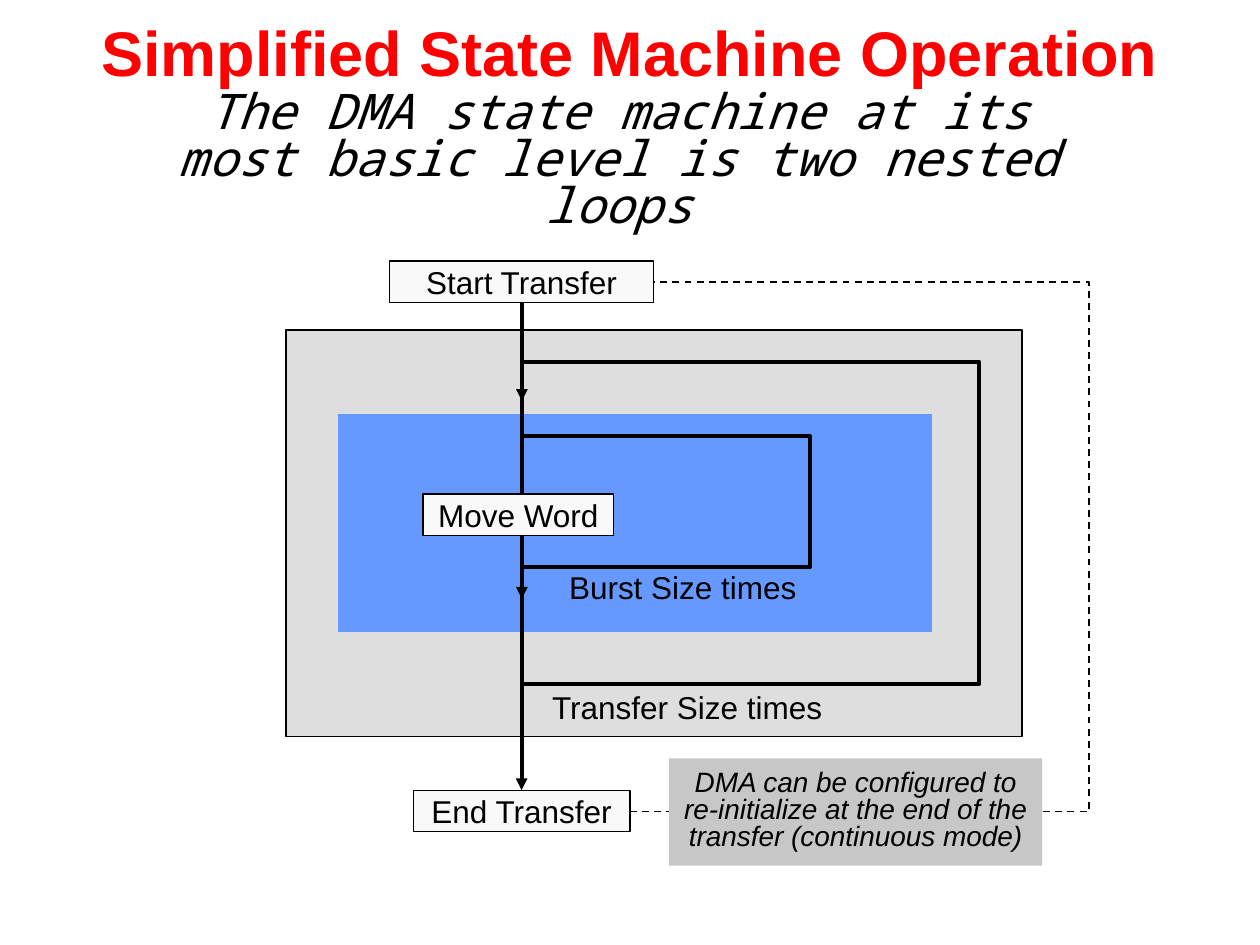
from lxml.etree import SubElement
from pptx import Presentation
from pptx.dml.color import RGBColor
from pptx.enum.dml import MSO_LINE
from pptx.enum.shapes import MSO_CONNECTOR, MSO_SHAPE
from pptx.enum.text import MSO_ANCHOR, PP_ALIGN
from pptx.oxml.ns import qn
from pptx.util import Cm, Pt

COLORS = {
    "title": "FF0000",
    "ink": "000000",
    "outer": "DEDEDE",
    "inner": "6699FF",
    "step": "F9F9F9",
    "note": "C7C7C7",
}
AXIS = 10.52


class Diagram:
    def __init__(self, page, font="Arial"):
        self.page = page
        self.font = font

    def color(self, name):
        return RGBColor.from_string(COLORS[name])

    def stroke(self, line, width, color="ink"):
        line.width = Pt(width)
        line.color.rgb = self.color(color)

    def add_text(self, box, text, size, color="ink", font=None, bold=False,
                 italic=False, spacing=None, anchor=MSO_ANCHOR.TOP, wrap=True):
        frame = box.text_frame
        frame.word_wrap = wrap
        frame.vertical_anchor = anchor
        para = frame.paragraphs[0]
        para.alignment = PP_ALIGN.CENTER
        if spacing:
            para.line_spacing = spacing
        span = para.add_run()
        span.text = text
        span.font.name = font or self.font
        span.font.size = Pt(size)
        span.font.bold = bold
        span.font.italic = italic
        span.font.color.rgb = self.color(color)

    def label(self, place, text, size=18, **style):
        box = self.page.shapes.add_textbox(*map(Cm, place))
        self.add_text(box, text, size, **style)

    def panel(self, place, fill, line=None, width=0.75):
        box = self.page.shapes.add_shape(MSO_SHAPE.RECTANGLE, *map(Cm, place))
        box.shadow.inherit = False
        box.fill.solid()
        box.fill.fore_color.rgb = self.color(fill)
        if line:
            self.stroke(box.line, width, line)
        else:
            box.line.fill.background()
        return box

    def step(self, left, top, width, text):
        box = self.panel((left, top, width, 0.84), "step", "ink")
        self.add_text(box, text, 18, anchor=MSO_ANCHOR.MIDDLE, wrap=False)
        return box

    def note(self, place, text):
        box = self.panel(place, "note")
        frame = box.text_frame
        frame.margin_left = frame.margin_right = Cm(0.25)
        frame.margin_top = frame.margin_bottom = Cm(0.25)
        self.add_text(box, text, 16, italic=True, spacing=0.8)

    def loop(self, left, right, top, bottom, width=2.25, dash=None):
        builder = self.page.shapes.build_freeform(Cm(left), Cm(bottom))
        corners = [(right, bottom), (right, top), (left, top)]
        builder.add_line_segments([(Cm(x), Cm(y)) for x, y in corners], close=False)
        shape = builder.convert_to_shape()
        shape.shadow.inherit = False
        shape.fill.background()
        self.stroke(shape.line, width)
        if dash:
            shape.line.dash_style = dash

    def arrow(self, top, bottom, start=None, end=None):
        arrow = self.page.shapes.add_connector(
            MSO_CONNECTOR.STRAIGHT, Cm(AXIS), Cm(top), Cm(AXIS), Cm(bottom))
        if start:
            arrow.begin_connect(start, 2)
        if end:
            arrow.end_connect(end, 0)
        self.stroke(arrow.line, 2.25)
        properties = arrow.element.spPr
        SubElement(properties.find(qn("a:ln")), qn("a:tailEnd"), type="triangle")
        SubElement(properties, qn("a:effectLst"))


def main():
    deck = Presentation()
    deck.slide_width, deck.slide_height = Cm(25.4), Cm(19.05)
    diagram = Diagram(deck.slides.add_slide(deck.slide_layouts[6]))

    diagram.loop(12.7, 21.95, 5.69, 16.36, width=1, dash=MSO_LINE.DASH)
    diagram.panel((5.77, 6.65, 14.83, 8.2), "outer", "ink", 1)
    diagram.label((0, 0, 25.4, 2.06), "Simplified State Machine Operation", 36,
                  color="title", bold=True, anchor=MSO_ANCHOR.MIDDLE)
    diagram.panel((6.83, 8.36, 11.94, 4.37), "inner", "inner")
    diagram.label((10.77, 11.33, 5.99, 1.02), "Burst Size times")
    diagram.label((10.64, 13.74, 6.43, 1.02), "Transfer Size times")
    diagram.label((2.64, 1.73, 19.69, 2.16),
                  "The DMA state machine at its most basic level is two nested loops",
                  28, font="Noto Sans Mono", italic=True, spacing=0.8)

    start = diagram.step(7.85, 5.26, 5.33, "Start Transfer")
    end = diagram.step(8.33, 15.93, 4.37, "End Transfer")
    diagram.loop(AXIS, 16.33, 8.79, 11.43)
    diagram.loop(AXIS, 19.74, 7.29, 13.79)
    diagram.arrow(10.8, 12.07)
    diagram.arrow(6.1, 15.93, start, end)
    diagram.arrow(7.82, 8.08)
    diagram.step(8.53, 9.96, 3.84, "Move Word")
    diagram.note((13.49, 15.29, 7.52, 2.16),
                 "DMA can be configured to re-initialize at the end of the "
                 "transfer (continuous mode)")

    deck.save("out.pptx")


if __name__ == "__main__":
    main()
